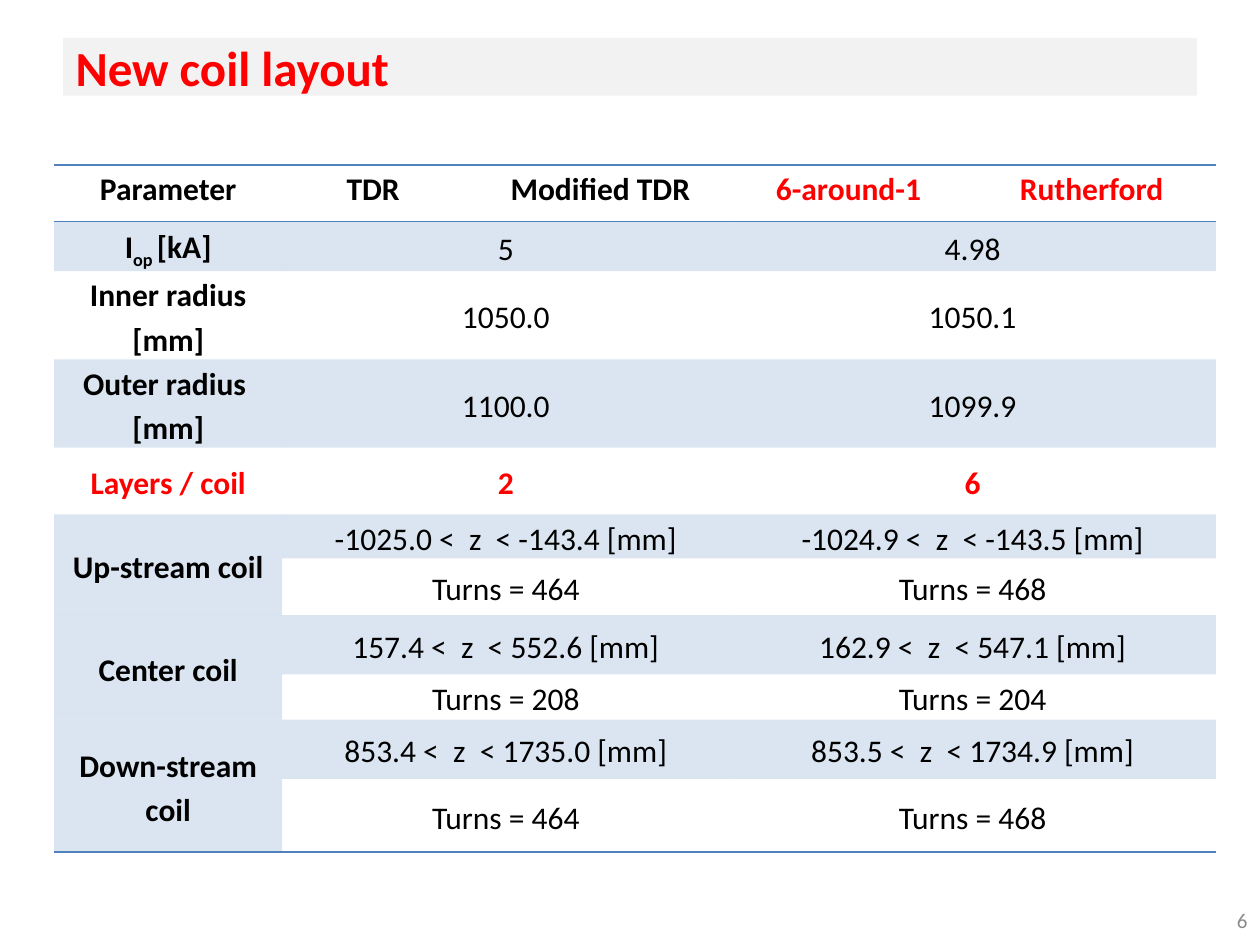
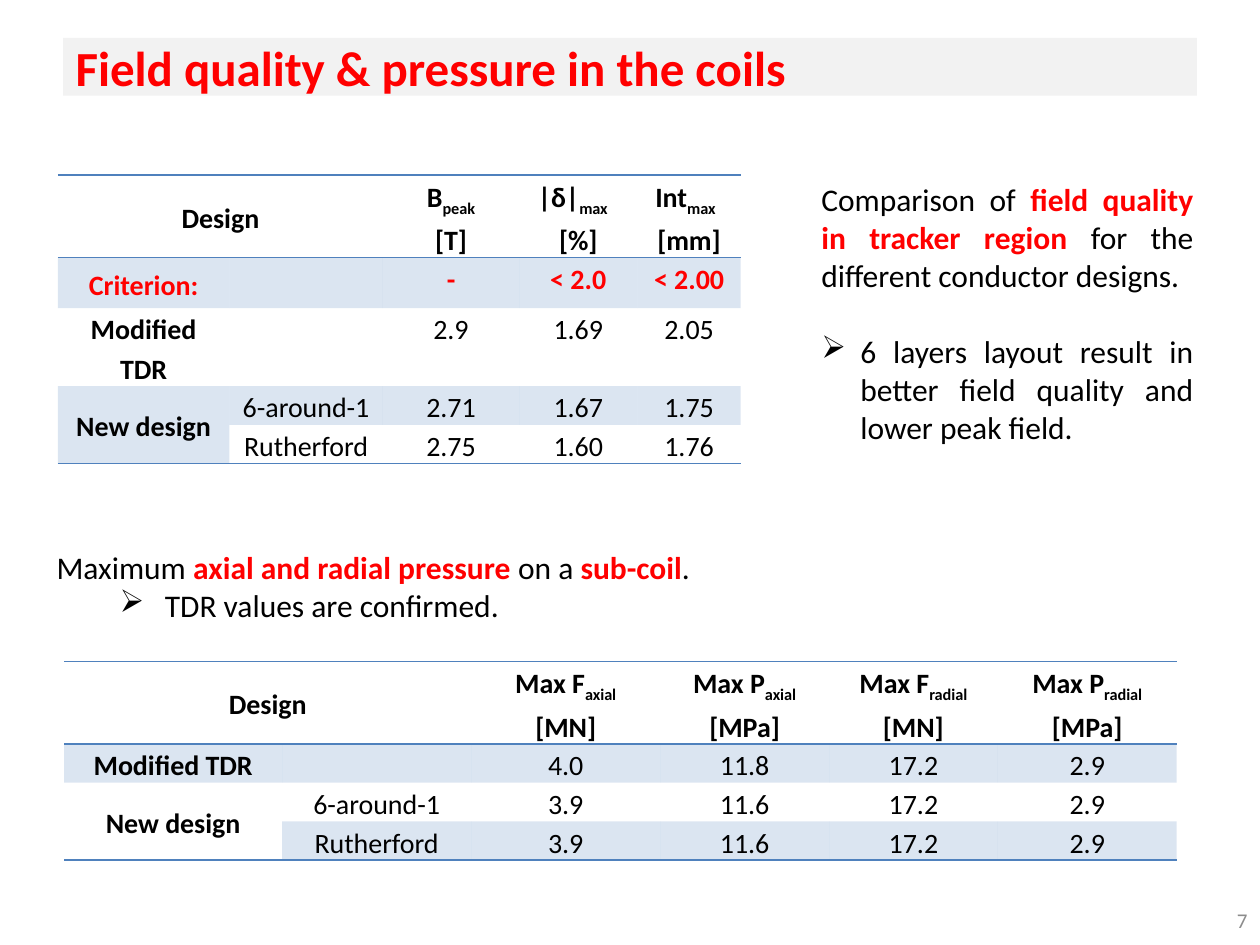
from lxml.etree import SubElement
from pptx import Presentation
from pptx.dml.color import RGBColor
from pptx.enum.text import MSO_ANCHOR as Anchor, MSO_AUTO_SIZE as AutoSize, PP_ALIGN as Align
from pptx.oxml.ns import qn
from pptx.util import Inches, Pt

COLORS = {"red": "FF0000", "black": "000000", "band": "F2F2F2",
          "blue": "4F81BD", "number": "8C8C8C"}
FONT = "Calibri"
PLAIN_TABLE = "{2D5ABB26-0587-4C30-8999-92F81FD0307C}"
LEFT, UP = "<", "^"


def rgb(name):
    return RGBColor.from_string(COLORS[name])


class Deck:
    def __init__(self):
        self.file = Presentation()
        self.file.slide_width, self.file.slide_height = Inches(10), Inches(7.5)
        self.page = None

    def add_page(self, title, number):
        self.page = self.file.slides.add_slide(self.file.slide_layouts[5])
        box = self.page.shapes.title
        box.left, box.top, box.width, box.height = map(Inches, (0.5, 0.3, 9, 0.46))
        box.fill.solid()
        box.fill.fore_color.rgb = rgb("band")
        frame = box.text_frame
        frame.auto_size = AutoSize.NONE
        frame.vertical_anchor = Anchor.MIDDLE
        para = frame.paragraphs[0]
        para.alignment = Align.LEFT
        self.span(para, title, 28, "red", True)

        frame = self.text_box(7.67, 7.1, 2.33, 0.4)
        frame.vertical_anchor = Anchor.MIDDLE
        para = frame.paragraphs[0]
        para.alignment = Align.RIGHT
        self.span(para, str(number), 12, "number")

    def span(self, para, text, size, color="black", bold=False, subscript=False):
        span = para.add_run()
        span.text = text
        font = span.font
        font.name, font.size, font.bold = FONT, Pt(size), bold
        font.color.rgb = rgb(color)
        if subscript:
            span._r.get_or_add_rPr().set("baseline", "-25000")

    def text_box(self, left, top, width, height):
        box = self.page.shapes.add_textbox(*map(Inches, (left, top, width, height)))
        box.text_frame.word_wrap = True
        return box.text_frame

    def note(self, place, intro, point, indent, hanging, gap=0):
        frame = self.text_box(*place)
        para = frame.paragraphs[0]
        para.alignment = Align.JUSTIFY
        for text, key in intro:
            self.span(para, text, 18, "red" if key else "black", key)
        para = frame.add_paragraph()
        para.alignment = Align.JUSTIFY
        para.space_before = Pt(gap)
        props = para._p.get_or_add_pPr()
        props.set("marL", str(Inches(indent)))
        props.set("indent", str(-Inches(hanging)))
        SubElement(props, qn("a:buChar"), char="➢")
        self.span(para, point, 18)

    def border(self, cell, side):
        line = SubElement(cell._tc.get_or_add_tcPr(), qn("a:ln" + side), w=str(Pt(1)))
        fill = SubElement(line, qn("a:solidFill"))
        SubElement(fill, qn("a:srgbClr"), val=COLORS["blue"])

    def fill_cell(self, cell, banded):
        if not banded:
            cell.fill.background()
            return
        cell.fill.solid()
        cell.fill.fore_color.rgb = rgb("blue")
        color = next(cell._tc.tcPr.find(qn("a:solidFill")).iter(qn("a:srgbClr")))
        SubElement(color, qn("a:alpha"), val="20000")

    def write_cell(self, cell, text, size, bold):
        red = text.startswith("*")
        frame = cell.text_frame
        for index, line in enumerate(text.lstrip("*").split("\n")):
            para = frame.add_paragraph() if index else frame.paragraphs[0]
            para.alignment = Align.CENTER
            para.line_spacing = 1.15
            for part, piece in enumerate(line.split("_")):
                if piece:
                    self.span(para, piece, size, "red" if red else "black",
                              bold or red, part % 2 == 1)

    def table(self, left, top, widths, heights, rows, size, is_top):
        place = map(Inches, (left, top, sum(widths), sum(heights)))
        table = self.page.shapes.add_table(len(rows), len(widths), *place).table
        table.first_row = table.horz_banding = False
        table._tbl.tblPr.find(qn("a:tableStyleId")).text = PLAIN_TABLE
        for column, width in zip(table.columns, widths):
            column.width = Inches(width)
        for row, height in zip(table.rows, heights):
            row.height = Inches(height)
        last = len(rows) - 1
        for r, row in enumerate(rows):
            for c, text in enumerate(row):
                cell = table.cell(r, c)
                if text == LEFT:
                    table.cell(r, c - 1).merge(cell)
                elif text == UP:
                    table.cell(r - 1, c).merge(cell)
        for r, row in enumerate(rows):
            for c, text in enumerate(row):
                cell = table.cell(r, c)
                cell.margin_left = cell.margin_right = Inches(0.07)
                cell.margin_top = cell.margin_bottom = 0
                cell.vertical_anchor = Anchor.TOP if is_top(r, c) else Anchor.MIDDLE
                if r == 0:
                    self.border(cell, "T")
                reaches_end = cell.is_merge_origin and r + cell.span_height > last
                if r in (0, last) or reaches_end:
                    self.border(cell, "B")
                if cell.is_spanned:
                    continue
                self.fill_cell(cell, r % 2 == 1)
                if text:
                    self.write_cell(cell, text, size, r == 0 or c == 0)


def pair(label, old, new):
    return label, old, LEFT, new, LEFT


def coil_layout(deck):
    deck.add_page("New coil layout", 6)
    rows = [
        ("Parameter", "TDR ", "Modified TDR", "*6-around-1", "*Rutherford"),
        pair("I_op _[kA]", "5", "4.98"),
        pair("Inner radius\n[mm]", "1050.0", "1050.1"),
        pair("Outer radius \n[mm]", "1100.0", "1099.9"),
        pair("*Layers / coil", "*2", "*6"),
        pair("Up-stream coil", "-1025.0 <  z  < -143.4 [mm]", "-1024.9 <  z  < -143.5 [mm]"),
        pair(UP, "Turns = 464", "Turns = 468"),
        pair("Center coil", "157.4 <  z  < 552.6 [mm]", "162.9 <  z  < 547.1 [mm]"),
        pair(UP, "Turns = 208", "Turns = 204"),
        pair("Down-stream coil", "853.4 <  z  < 1735.0 [mm]", "853.5 <  z  < 1734.9 [mm]"),
        pair(UP, "Turns = 464", "Turns = 468"),
    ]
    deck.table(0.43, 1.31, (1.81, 1.5, 2.05, 1.89, 1.97),
               (0.45, 0.39, 0.7, 0.7, 0.53, 0.35, 0.45, 0.47, 0.36, 0.47, 0.58),
               rows, 18, lambda r, c: r == 0)


def field_and_pressure(deck):
    deck.add_page("Field quality & pressure in the coils", 7)
    deck.note((6.42, 1.38, 3.15, 2.32),
              [("Comparison of ", False), ("field quality in tracker region ", True),
               ("for the different conductor designs.", False)],
              "6 layers layout result in better field quality and lower peak field.",
              0.31, 0.31, gap=22)

    def is_value(r, c):
        return c >= 2

    field_rows = [
        ("Design", LEFT, "B_peak_\n[T]", "|δ|_max   _\n[%]", "Int_max  _\n[mm]"),
        ("*Criterion:", "", "*-", "*< 2.0", "*< 2.00"),
        ("Modified TDR", "", "2.9", "1.69", "2.05"),
        ("New design", "6-around-1", "2.71", "1.67", "1.75"),
        (UP, "Rutherford", "2.75", "1.60", "1.76"),
    ]
    deck.table(0.46, 1.39, (1.36, 1.22, 1.08, 0.94, 0.82),
               (0.65, 0.4, 0.62, 0.3, 0.3), field_rows, 16, is_value)
    pressure_rows = [
        ("Design", LEFT, "Max F_axial_\n[MN]", "Max P_axial_\n[MPa]",
         "Max F_radial_\n[MN]", "Max P_radial_\n[MPa]"),
        ("Modified TDR", "", "4.0", "11.8", "17.2", "2.9"),
        ("New design", "6-around-1", "3.9", "11.6", "17.2", "2.9"),
        (UP, "Rutherford", "3.9", "11.6", "17.2", "2.9"),
    ]
    deck.table(0.51, 5.25, (1.73, 1.5, 1.5, 1.34, 1.34, 1.42),
               (0.65, 0.3, 0.3, 0.3), pressure_rows, 16, is_value)
    deck.note((0.35, 4.3, 7.38, 0.71),
              [("Maximum ", False), ("axial and radial pressure ", True),
               ("on a ", False), ("sub-coil", True), (".", False)],
              "TDR values are confirmed.", 0.86, 0.36)


def main():
    deck = Deck()
    coil_layout(deck)
    field_and_pressure(deck)
    deck.file.save("out.pptx")


if __name__ == "__main__":
    main()
